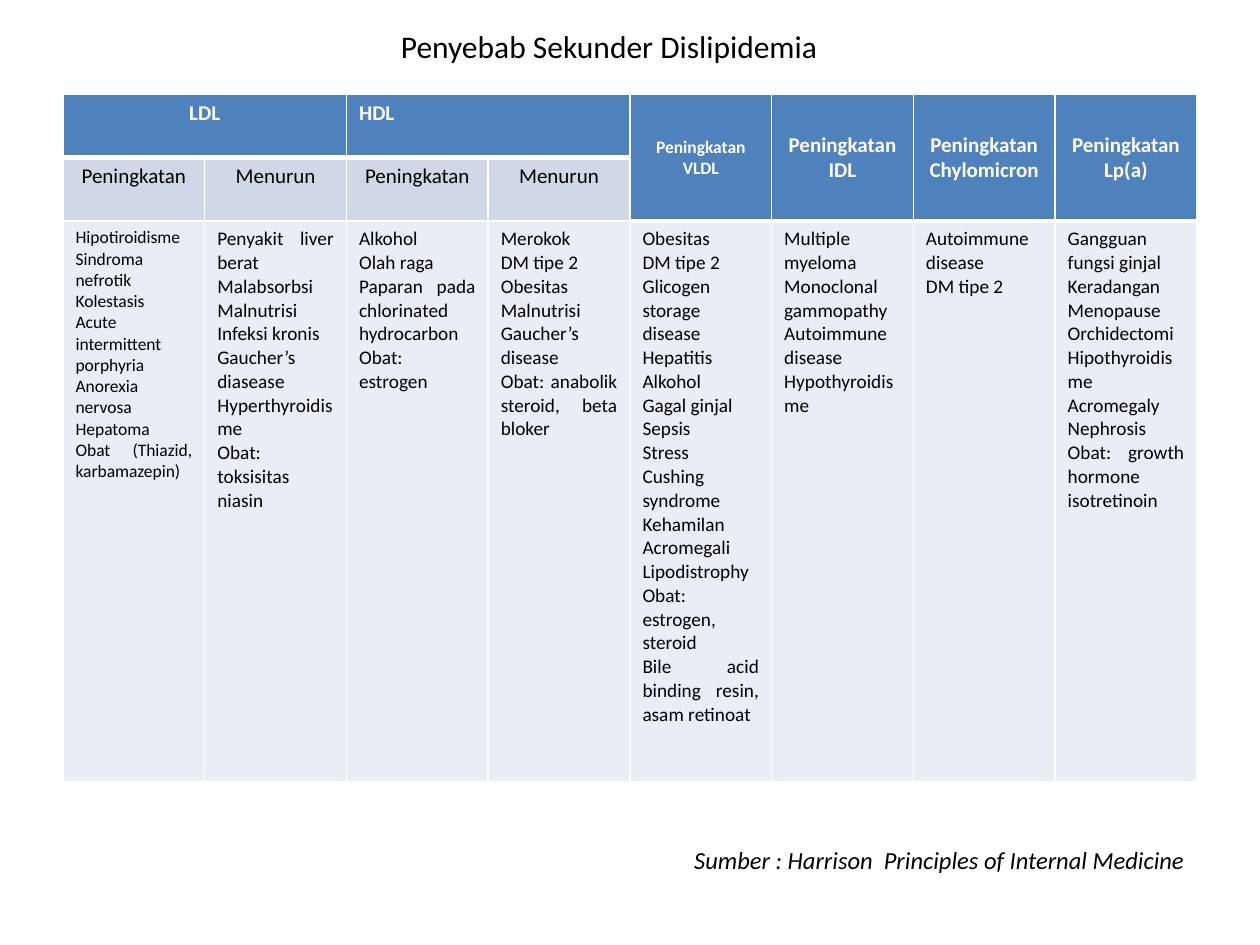
import pptx
import pptx.dml.color
import pptx.enum.text
import pptx.oxml
import pptx.oxml.ns
import pptx.util
from pptx.util import Cm

ALIGN = pptx.enum.text.PP_ALIGN
ANCHOR = pptx.enum.text.MSO_ANCHOR
RGBColor = pptx.dml.color.RGBColor

FONT = "Calibri"
BLACK = RGBColor(0x00, 0x00, 0x00)
WHITE = RGBColor(0xFF, 0xFF, 0xFF)
HEADER_BLUE = RGBColor(0x4F, 0x81, 0xBD)
SUBHEADER_BLUE = RGBColor(0xD0, 0xD8, 0xE8)
BODY_BLUE = RGBColor(0xE9, 0xED, 0xF4)

TITLE = "Penyebab Sekunder Dislipidemia"
SOURCE = "Sumber : Harrison  Principles of Internal Medicine"

# text, first column, rows spanned, columns spanned, size, alignment
HEADERS = [
    ("LDL", 0, 1, 2, 12, ALIGN.CENTER),
    ("HDL", 2, 1, 2, 12, ALIGN.LEFT),
    ("Peningkatan VLDL", 4, 2, 1, 10, ALIGN.CENTER),
    ("Peningkatan IDL", 5, 2, 1, 12, ALIGN.CENTER),
    ("Peningkatan Chylomicron", 6, 2, 1, 12, ALIGN.CENTER),
    ("Peningkatan Lp(a)", 7, 2, 1, 12, ALIGN.CENTER),
]
SUBHEADERS = ["Peningkatan", "Menurun"] * 2

# size, causes
CAUSES = [
    (10, ["Hipotiroidisme", "Sindroma nefrotik", "Kolestasis",
          "Acute intermittent porphyria", "Anorexia nervosa", "Hepatoma",
          "Obat (Thiazid, karbamazepin)"]),
    (11, ["Penyakit liver berat", "Malabsorbsi", "Malnutrisi", "Infeksi kronis",
          "Gaucher’s diasease", "Hyperthyroidisme", "Obat: toksisitas niasin"]),
    (11, ["Alkohol", "Olah raga", "Paparan pada chlorinated hydrocarbon",
          "Obat: estrogen"]),
    (11, ["Merokok", "DM tipe 2", "Obesitas", "Malnutrisi", "Gaucher’s disease",
          "Obat: anabolik steroid, beta bloker"]),
    (11, ["Obesitas", "DM tipe 2", "Glicogen storage disease", "Hepatitis",
          "Alkohol", "Gagal ginjal", "Sepsis", "Stress", "Cushing syndrome",
          "Kehamilan", "Acromegali", "Lipodistrophy", "Obat: estrogen, steroid",
          "Bile acid binding resin, asam retinoat"]),
    (11, ["Multiple myeloma", "Monoclonal gammopathy", "Autoimmune disease",
          "Hypothyroidisme"]),
    (11, ["Autoimmune disease", "DM tipe 2"]),
    (11, ["Gangguan fungsi ginjal", "Keradangan", "Menopause", "Orchidectomi",
          "Hipothyroidisme", "Acromegaly", "Nephrosis", "Obat: growth hormone",
          "isotretinoin"]),
]
ROW_HEIGHTS = [1.27, 1.07, 11.3]
TABLE_WIDTH = 22.86


def write(frame, lines, size, align, color=BLACK, bold=False, italic=False):
    frame.text = "\n".join(lines)
    for para in frame.paragraphs:
        para.alignment = align
        para.font.name = FONT
        para.font.size = pptx.util.Pt(size)
        para.font.color.rgb = color
        para.font.bold = bold
        para.font.italic = italic


def add_border(cell, side, points):
    line = pptx.oxml.parse_xml(
        f'<a:ln{side} {pptx.oxml.ns.nsdecls("a")} w="{pptx.util.Pt(points)}">'
        f'<a:solidFill><a:srgbClr val="{WHITE}"/></a:solidFill></a:ln{side}>')
    cell._tc.get_or_add_tcPr().append(line)


def format_cell(cell, row, column):
    """Draw the white rules, thicker below the headers, then the fill."""
    is_header = row == 0 or (row == 1 and column >= len(SUBHEADERS))
    add_border(cell, "L", 1)
    add_border(cell, "R", 1)
    if row == 0:
        add_border(cell, "T", 1)
    add_border(cell, "B", 3 if is_header else 1)
    cell.fill.solid()
    cell.fill.fore_color.rgb = (
        HEADER_BLUE if is_header else SUBHEADER_BLUE if row == 1 else BODY_BLUE)


def add_causes_table(page):
    table = page.shapes.add_table(
        len(ROW_HEIGHTS), len(CAUSES), Cm(1.27), Cm(1.9),
        Cm(TABLE_WIDTH), Cm(sum(ROW_HEIGHTS))).table
    table.first_row = table.horz_banding = False
    for row, height in zip(table.rows, ROW_HEIGHTS):
        row.height = Cm(height)
    for column in table.columns:
        column.width = Cm(TABLE_WIDTH / len(CAUSES))
    for row in range(len(ROW_HEIGHTS)):
        for column in range(len(CAUSES)):
            format_cell(table.cell(row, column), row, column)

    for text, column, rows, columns, size, align in HEADERS:
        cell = table.cell(0, column)
        cell.merge(table.cell(rows - 1, column + columns - 1))
        write(cell.text_frame, [text], size, align, WHITE, bold=True)
        if rows > 1:
            cell.vertical_anchor = ANCHOR.MIDDLE
    for column, text in enumerate(SUBHEADERS):
        write(table.cell(1, column).text_frame, [text], 12, ALIGN.CENTER)
    for column, (size, causes) in enumerate(CAUSES):
        write(table.cell(2, column).text_frame, causes, size, ALIGN.JUSTIFY)


def main():
    deck = pptx.Presentation()
    deck.slide_width, deck.slide_height = Cm(25.4), Cm(19.05)
    page = deck.slides.add_slide(deck.slide_layouts.get_by_name("Title Only"))

    title = page.shapes.title
    title.left, title.top, title.width, title.height = (
        Cm(2.12), Cm(0.42), Cm(20.32), Cm(1.03))
    title.text_frame.vertical_anchor = ANCHOR.TOP
    title.text_frame.auto_size = pptx.enum.text.MSO_AUTO_SIZE.NONE
    write(title.text_frame, [TITLE], 18, ALIGN.CENTER)

    add_causes_table(page)

    source = page.shapes.add_textbox(Cm(12.27), Cm(16.92), Cm(11.86), Cm(0.86))
    source.text_frame.word_wrap = True
    write(source.text_frame, [SOURCE], 14, ALIGN.RIGHT, italic=True)

    deck.save("out.pptx")


if __name__ == "__main__":
    main()
